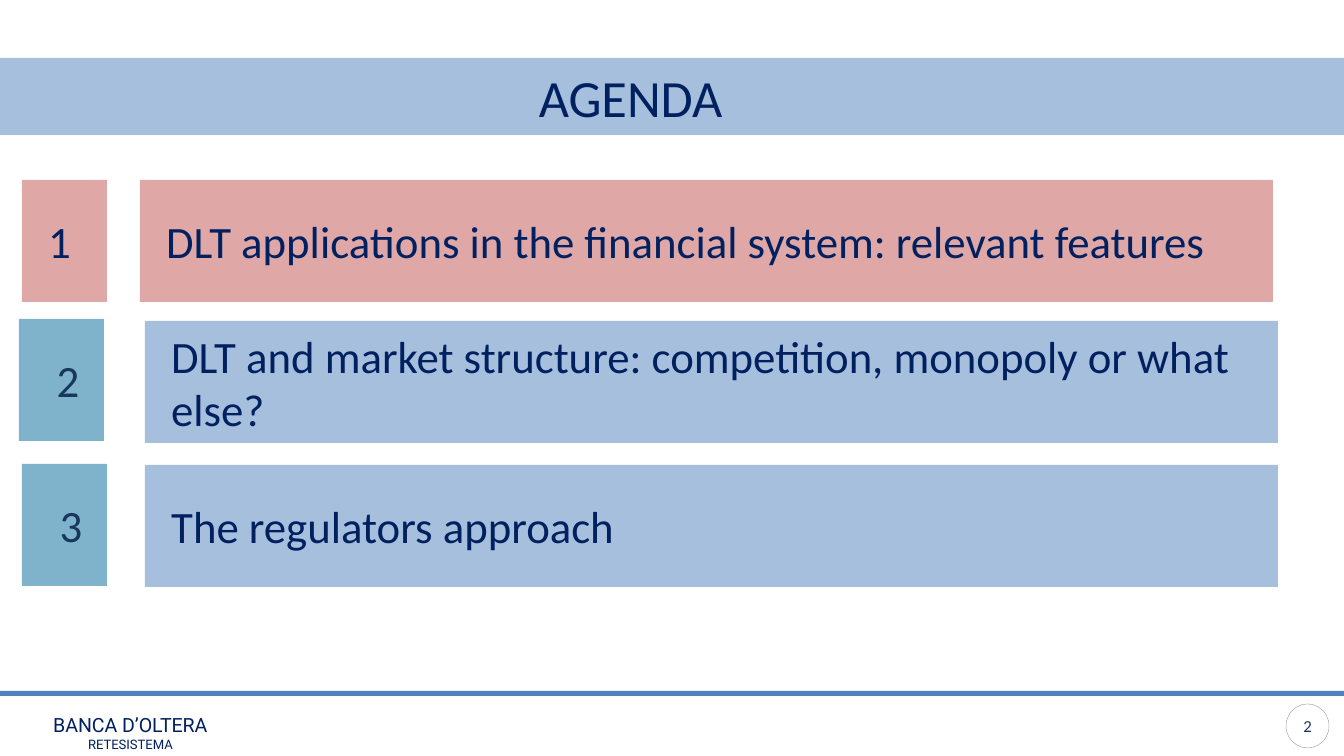
import pptx
import pptx.dml.color
import pptx.enum.shapes
import pptx.enum.text
import pptx.oxml
import pptx.oxml.ns
import pptx.util

PX = 914400 / 134.4
SLIDE_WIDTH, SLIDE_HEIGHT = 1344, 756
COLORS = {
    "white": "FFFFFF",
    "blue": "4F81BD",
    "red": "C0504D",
    "teal": "006699",
    "navy": "002060",
    "slate": "17375E",
    "gray": "A6A6A6",
}
SHAPES = pptx.enum.shapes.MSO_SHAPE
ALIGN = pptx.enum.text.PP_ALIGN
MIDDLE = pptx.enum.text.MSO_ANCHOR.MIDDLE
AGENDA = [
    {"topic": "DLT applications in the financial system: relevant features",
     "number_fill": "red", "topic_fill": "red", "number_color": "navy",
     "number_align": ALIGN.LEFT, "number_at": (3, 0), "topic_at": (121, 0)},
    {"topic": "DLT and market structure: competition, monopoly or what else?",
     "number_fill": "teal", "topic_fill": "blue", "number_color": "slate",
     "number_align": ALIGN.CENTER, "number_at": (0, -3), "topic_at": (126, -1)},
    {"topic": "The regulators approach",
     "number_fill": "teal", "topic_fill": "blue", "number_color": "slate",
     "number_align": ALIGN.CENTER, "number_at": (3, 0), "topic_at": (126, 1)},
]


def emu(pixels):
    return pptx.util.Emu(round(pixels * PX))


def rgb(name):
    return pptx.dml.color.RGBColor.from_string(COLORS[name])


def add_block(slide, box, fill, kind=SHAPES.RECTANGLE, opacity=100):
    """Add a filled shape without outline or shadow; opacity is in percent."""
    shape = slide.shapes.add_shape(kind, *map(emu, box))
    shape.shadow.inherit = False
    shape.fill.solid()
    shape.fill.fore_color.rgb = rgb(fill)
    shape.line.fill.background()
    if opacity < 100:
        color = shape.fill._xPr.find(".//" + pptx.oxml.ns.qn("a:srgbClr"))
        alpha = pptx.oxml.parse_xml(
            f'<a:alpha {pptx.oxml.ns.nsdecls("a")} val="{opacity * 1000}"/>')
        color.append(alpha)
    return shape


def write_text(shape, lines, color, font="Calibri", align=ALIGN.LEFT,
               anchor=MIDDLE, indent=0):
    """Write (text, size) lines as paragraphs; indent is in px."""
    frame = shape.text_frame
    frame.word_wrap = True
    frame.vertical_anchor = anchor
    for index, (text, size) in enumerate(lines):
        paragraph = frame.add_paragraph() if index else frame.paragraphs[0]
        paragraph.alignment = align
        if indent:
            properties = paragraph._p.get_or_add_pPr()
            properties.set("marL", str(emu(indent)))
            properties.set("indent", "0")
        run = paragraph.add_run()
        run.text = text
        run.font.color.rgb = rgb(color)
        for name, value in {"name": font, "size": pptx.util.Pt(size)}.items():
            setattr(run.font, name, value)


def add_header(slide, left, top, width, height):
    add_block(slide, (left, top, width, height), "blue", opacity=50)
    title = slide.shapes.add_textbox(
        *map(emu, (left + 390, top - 8, 481, height + 17)))
    write_text(title, [("AGENDA", 28)], "navy", align=ALIGN.CENTER)


def add_agenda_row(slide, left, top, height, number, row):
    """Add a number tile and its topic bar, each with its own offset."""
    number_x, number_y = row["number_at"]
    topic_x, topic_y = row["topic_at"]
    tile = add_block(slide, (left + number_x, top + number_y, 85, height),
                     row["number_fill"], opacity=50)
    write_text(tile, [(str(number), 24)], row["number_color"],
               align=row["number_align"], indent=13)
    bar = add_block(slide, (left + topic_x, top + topic_y, 1133, height),
                    row["topic_fill"], opacity=50)
    write_text(bar, [(row["topic"], 24)], "navy", indent=13)


def add_agenda(slide, left, top, pitch, row_height):
    for index, row in enumerate(AGENDA):
        add_agenda_row(slide, left, top + index * pitch, row_height,
                       index + 1, row)


def add_footer(slide, left, top, width):
    add_block(slide, (left, top, width, 5), "blue")
    owner = slide.shapes.add_textbox(*map(emu, (left + 17, top + 15, 227, 54)))
    write_text(owner, [("BANCA D’OLTERA", 10.5), ("RETESISTEMA", 7)], "navy",
               font="Roboto", align=ALIGN.CENTER,
               anchor=pptx.enum.text.MSO_ANCHOR.TOP)

    badge = add_block(slide, (left + width - 58, top + 13, 43, 44), "white",
                      SHAPES.OVAL)
    badge.line.color.rgb = rgb("gray")
    badge.line.width = pptx.util.Pt(0.25)
    for side in ("left", "top", "right", "bottom"):
        setattr(badge.text_frame, f"margin_{side}", 0)
    write_text(badge, [("2", 9)], "slate", align=ALIGN.CENTER)


def main():
    presentation = pptx.Presentation()
    presentation.slide_width = emu(SLIDE_WIDTH)
    presentation.slide_height = emu(SLIDE_HEIGHT)
    slide = presentation.slides.add_slide(presentation.slide_layouts[6])
    add_header(slide, 0, 58, SLIDE_WIDTH, 77)
    add_agenda(slide, 19, 180, 142, 122)
    add_footer(slide, 0, 691, SLIDE_WIDTH)
    presentation.save("out.pptx")


if __name__ == "__main__":
    main()
